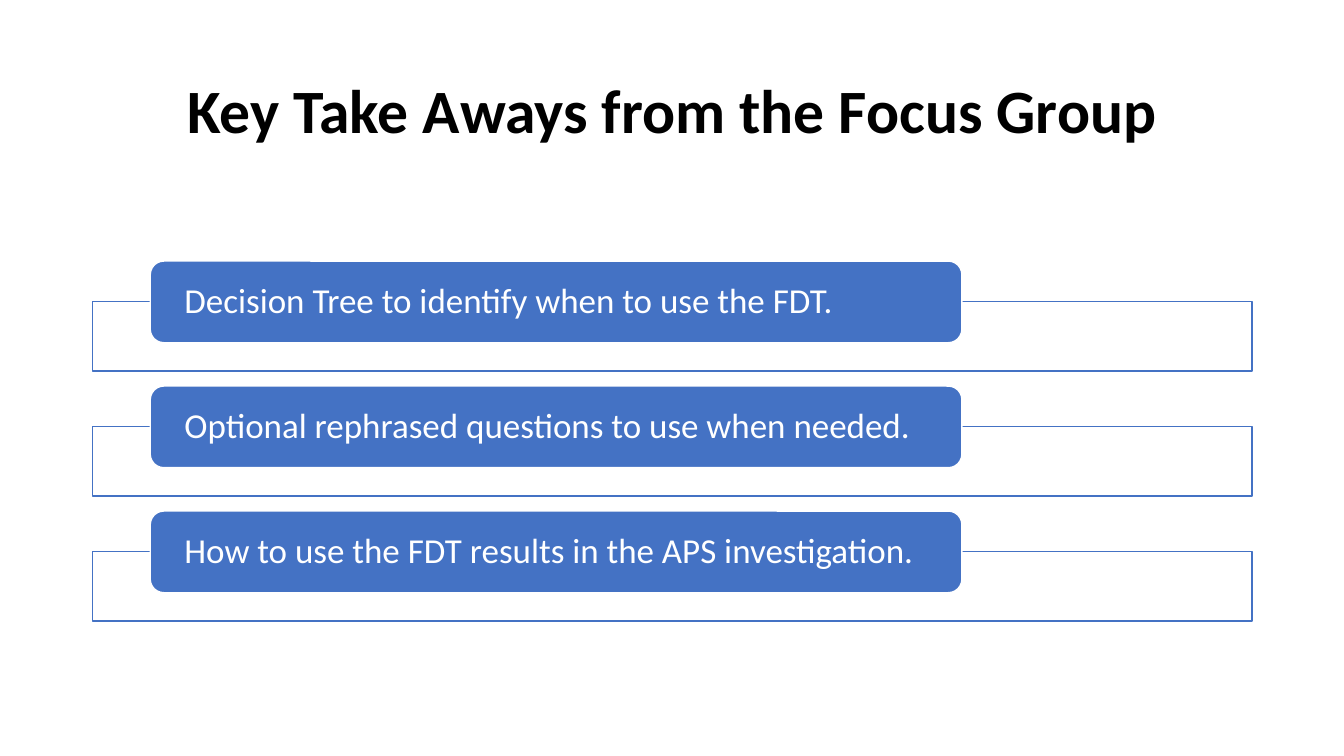
import lxml.etree
import pptx
import pptx.dml.color
import pptx.enum.shapes
import pptx.enum.text
import pptx.oxml.ns
import pptx.util
from pptx.util import Inches

SHAPES = pptx.enum.shapes.MSO_SHAPE
ALIGN = pptx.enum.text.PP_ALIGN
BLUE, WHITE, BLACK = "4472C4", "FFFFFF", "000000"
TAKEAWAYS = [
    "Decision Tree to identify when to use the FDT.",
    "Optional rephrased questions to use when needed.",
    "How to use the FDT results in the APS investigation.",
]
FIRST_TOP, ROW_STEP = 2.59, 1.24


def rgb(color):
    return pptx.dml.color.RGBColor.from_string(color)


def add_box(slide, kind, left, top, width, height, fill, line):
    sp = slide.shapes.add_shape(
        kind, Inches(left), Inches(top), Inches(width), Inches(height))
    sp.shadow.inherit = False
    sp.fill.solid()
    sp.fill.fore_color.rgb = rgb(fill)
    sp.line.color.rgb = rgb(line)
    sp.line.width = pptx.util.Pt(1)
    return sp


def set_opacity(sp, percent):
    color = sp.fill._xPr.find(".//" + pptx.oxml.ns.qn("a:srgbClr"))
    alpha = lxml.etree.SubElement(color, pptx.oxml.ns.qn("a:alpha"))
    alpha.set("val", str(percent * 1000))


def write_text(sp, text, size, color, align, bold=False):
    """Fill a shape with one vertically centred line of text."""
    tf = sp.text_frame
    tf.word_wrap = True
    tf.vertical_anchor = pptx.enum.text.MSO_ANCHOR.MIDDLE
    p = tf.paragraphs[0]
    p.alignment = align
    p.line_spacing = 0.9
    r = p.add_run()
    r.text = text
    r.font.name = "Calibri"
    r.font.size = pptx.util.Pt(size)
    r.font.bold = bold
    r.font.color.rgb = rgb(color)


def add_title(slide, text):
    sp = slide.shapes.add_textbox(
        Inches(0.92), Inches(0.4), Inches(11.5), Inches(1.45))
    write_text(sp, text, 44, BLACK, ALIGN.CENTER, bold=True)


def add_takeaway(slide, top, text):
    """Add a blue label overlapping the outlined frame behind it."""
    frame = add_box(slide, SHAPES.RECTANGLE, 0.92, top + 0.4, 11.5, 0.69,
                    WHITE, BLUE)
    set_opacity(frame, 90)
    label = add_box(slide, SHAPES.ROUNDED_RECTANGLE, 1.49, top, 8.05, 0.81,
                    BLUE, WHITE)
    tf = label.text_frame
    tf.margin_left = tf.margin_right = Inches(0.3)
    tf.margin_top = tf.margin_bottom = 0
    write_text(label, text, 25, WHITE, ALIGN.LEFT)


def main():
    prs = pptx.Presentation()
    prs.slide_width, prs.slide_height = Inches(13.33), Inches(7.5)
    slide = prs.slides.add_slide(prs.slide_layouts[6])
    add_title(slide, "Key Take Aways from the Focus Group")
    for i, text in enumerate(TAKEAWAYS):
        add_takeaway(slide, FIRST_TOP + i * ROW_STEP, text)
    prs.save("out.pptx")


if __name__ == "__main__":
    main()
